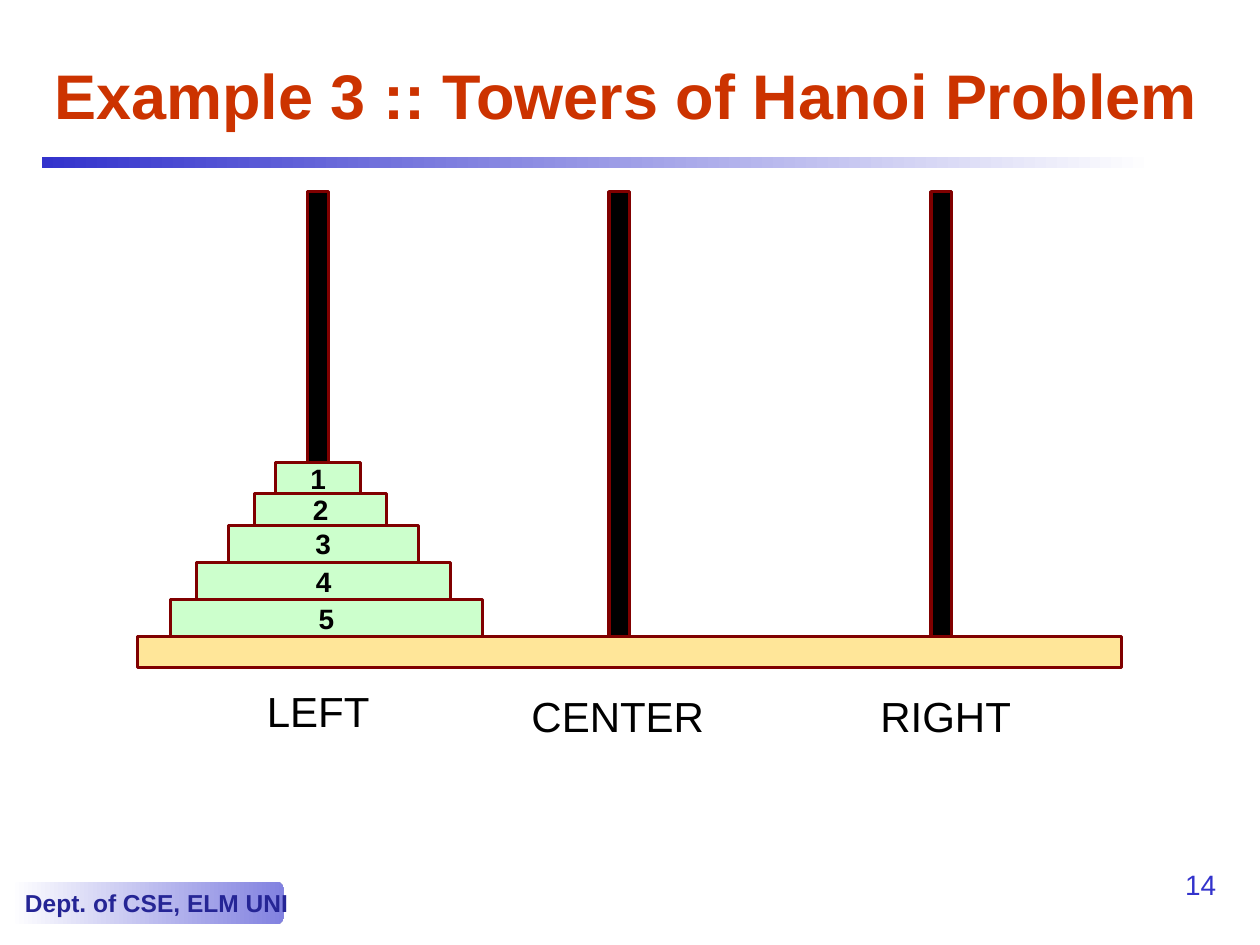
from pptx import Presentation
from pptx.dml.color import RGBColor
from pptx.enum.shapes import MSO_SHAPE as Shape
from pptx.enum.text import MSO_ANCHOR as Anchor, PP_ALIGN as Align
from pptx.util import Pt

COLORS = {
    "title": "CC3300",
    "accent": "3333CC",
    "white": "FFFFFF",
    "footer": "8282E0",
    "footer_text": "252595",
    "outline": "800000",
    "black": "000000",
    "base": "FFE699",
    "disc": "CCFFCC",
}
POLE_TOP, POLE_WIDTH = 109.5, 12
BASE_TOP = 363.6
POLE_LEFTS = (175.8, 348, 532)
# Left, width and height of each disc, from the bottom up
DISCS = (
    (97.2, 178.6, 21),
    (112.3, 145.4, 21.4),
    (130.3, 108.7, 21),
    (145.4, 75.6, 18),
    (157.7, 48.2, 18),
)
# Name, left, top and width of each pole's label
LABELS = (
    ("LEFT", 145.4, 388, 75.6),
    ("CENTER", 296.6, 391, 145.4),
    ("RIGHT", 496, 391, 103),
)


def color(name):
    return RGBColor.from_string(COLORS[name])


def write(shape, text, size, ink, bold=False, align=Align.LEFT,
          anchor=Anchor.TOP, wrap=True):
    frame = shape.text_frame
    frame.word_wrap = wrap
    frame.vertical_anchor = anchor
    para = frame.paragraphs[0]
    para.text = text
    para.alignment = align
    para.font.name = "Arial"
    para.font.size = Pt(size)
    para.font.bold = bold
    para.font.color.rgb = color(ink)


def add_text(page, text, left, top, width, height, size, ink, **style):
    box = page.shapes.add_textbox(Pt(left), Pt(top), Pt(width), Pt(height))
    write(box, text, size, ink, **style)


def add_block(page, left, top, width, height, fill):
    """Add an outlined rectangle: a pole, a disc or the base."""
    block = page.shapes.add_shape(
        Shape.RECTANGLE, Pt(left), Pt(top), Pt(width), Pt(height))
    block.shadow.inherit = False
    block.fill.solid()
    block.fill.fore_color.rgb = color(fill)
    block.line.color.rgb = color("outline")
    block.line.width = Pt(1.75)
    return block


def add_fade(page, kind, left, top, width, height, start, end):
    """Add a shape without outline that fades from left to right."""
    band = page.shapes.add_shape(
        kind, Pt(left), Pt(top), Pt(width), Pt(height))
    band.shadow.inherit = False
    band.line.fill.background()
    band.fill.gradient()
    band.fill.gradient_angle = 0
    for stop, name, position in zip(
            band.fill.gradient_stops, (start, end), (0, 1)):
        stop.color.rgb = color(name)
        stop.position = position
    return band


def add_frame(page):
    """Add the title, its rule, the footer and the page number."""
    add_fade(page, Shape.RECTANGLE, 24, 90, 636, 6, "accent", "white")
    footer = add_fade(page, Shape.ROUNDED_RECTANGLE, 6, 504, 156, 24,
                      "white", "footer")
    write(footer, "Dept. of CSE, ELM UNI", 14, "footer_text", bold=True,
          anchor=Anchor.MIDDLE, wrap=False)
    add_text(page, "14", 660, 492, 42, 36, 16, "accent", align=Align.RIGHT)
    add_text(page, "Example 3 :: Towers of Hanoi Problem", 24, 24, 678, 60,
             36, "title", bold=True, anchor=Anchor.MIDDLE)


def add_discs(page):
    top = BASE_TOP
    for number, (left, width, height) in zip(range(len(DISCS), 0, -1), DISCS):
        top -= height
        disc = add_block(page, left, top, width, height, "disc")
        write(disc, str(number), 16, "black", bold=True, align=Align.CENTER,
              anchor=Anchor.MIDDLE, wrap=False)


def main():
    deck = Presentation()
    deck.slide_width, deck.slide_height = Pt(720), Pt(540)
    page = deck.slides.add_slide(deck.slide_layouts[6])
    add_frame(page)
    for left in POLE_LEFTS:
        add_block(page, left, POLE_TOP, POLE_WIDTH, BASE_TOP - POLE_TOP,
                  "black")
    add_block(page, 78.5, BASE_TOP, 562.5, 18, "base")
    add_discs(page)
    for name, left, top, width in LABELS:
        add_text(page, name, left, top, width, 36, 24, "black")
    deck.save("out.pptx")


if __name__ == "__main__":
    main()
